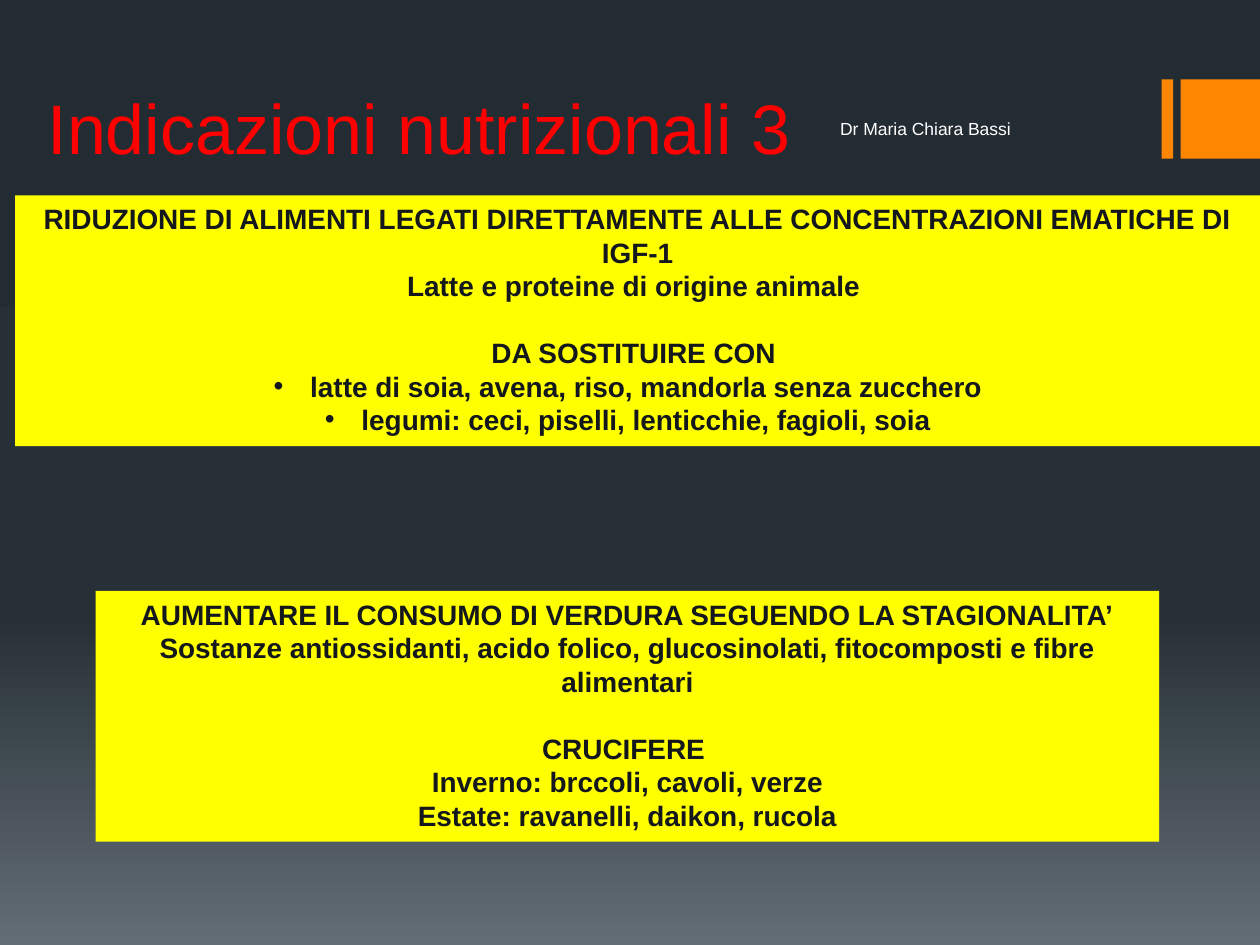
from copy import deepcopy

from lxml import etree
from pptx import Presentation
from pptx import util as u
from pptx.dml.color import RGBColor
from pptx.enum import shapes, text
from pptx.oxml.ns import qn


def rgb(value):
    return RGBColor.from_string(value)


class Deck:
    """Slide builder holding the style and the current slide."""

    font = "Arial"
    accent, panel_fill, panel_ink = "FF8600", "FFFF00", "14181C"
    title_ink, author_ink = "FF0000", "FFFFFF"

    def __init__(self, prs):
        self.s = prs.slides.add_slide(prs.slide_layouts[6])

    def background(self, stops):
        fill = self.s.background.fill
        fill.gradient()
        fill.gradient_angle = 270
        gradient = self.s.element.find(".//" + qn("a:gsLst"))
        gradient.insert(1, deepcopy(gradient[0]))
        for stop, (position, color) in zip(fill.gradient_stops, stops):
            stop.position = position
            stop.color.rgb = rgb(color)

    def rect(self, box, color):
        sp = self.s.shapes.add_shape(shapes.MSO_SHAPE.RECTANGLE, *map(u.Inches, box))
        sp.shadow.inherit = False
        sp.fill.solid()
        sp.fill.fore_color.rgb = rgb(color)
        sp.line.fill.background()
        return sp

    def set_text(self, p, words, size, color, bold=False):
        p.text = words
        for r in p.runs:
            r.font.name, r.font.size, r.font.bold = self.font, u.Pt(size), bold
            r.font.color.rgb = rgb(color)

    def label(self, box, words, size, color, anchor, top=0.05):
        tf = self.s.shapes.add_textbox(*map(u.Inches, box)).text_frame
        tf.word_wrap = True
        tf.margin_top = u.Inches(top)
        tf.vertical_anchor = anchor
        self.set_text(tf.paragraphs[0], words, size, color)

    def bullet(self, p):
        pPr = p._p.get_or_add_pPr()
        pPr.set("marL", str(u.Inches(0.06)))
        pPr.set("indent", str(u.Inches(-0.23)))
        etree.SubElement(pPr, qn("a:buFont")).set("typeface", self.font)
        etree.SubElement(pPr, qn("a:buChar")).set("char", "•")

    def panel(self, box, lines, gap_before, bullets=()):
        tf = self.rect(box, self.panel_fill).text_frame
        tf.word_wrap = True
        tf.vertical_anchor = text.MSO_ANCHOR.TOP
        for i, line in enumerate(lines):
            p = tf.paragraphs[0] if i == 0 else tf.add_paragraph()
            p.alignment = text.PP_ALIGN.CENTER
            self.set_text(p, line, 16, self.panel_ink, bold=True)
            if i == gap_before:
                p.space_before = u.Pt(19)
            if i in bullets:
                self.bullet(p)


def main():
    prs = Presentation()
    prs.slide_width, prs.slide_height = u.Inches(10), u.Inches(7.5)
    deck = Deck(prs)
    deck.background([(0, "242C33"), (0.65, "273037"), (1, "636D76")])
    for left, width in ((9.22, 0.09), (9.37, 0.63)):
        deck.rect((left, 0.63, width, 0.63), deck.accent)
    deck.label((6.57, 0.94, 2.46, 0.33), "Dr Maria Chiara Bassi", 10,
               deck.author_ink, text.MSO_ANCHOR.TOP, top=0)
    deck.label((0.28, 0.13, 8, 1.26), "Indicazioni nutrizionali 3", 40,
               deck.title_ink, text.MSO_ANCHOR.BOTTOM)
    deck.panel((0.12, 1.55, 9.88, 1.99), [
        "RIDUZIONE DI ALIMENTI LEGATI DIRETTAMENTE ALLE CONCENTRAZIONI EMATICHE DI IGF-1",
        "Latte e proteine di origine animale ",
        "DA SOSTITUIRE CON ",
        " latte di soia, avena, riso, mandorla senza zucchero",
        " legumi: ceci, piselli, lenticchie, fagioli, soia",
    ], gap_before=2, bullets=(3, 4))
    deck.panel((0.76, 4.69, 8.44, 1.99), [
        "AUMENTARE IL CONSUMO DI VERDURA SEGUENDO LA STAGIONALITA’",
        "Sostanze antiossidanti, acido folico, glucosinolati, fitocomposti e fibre alimentari",
        "CRUCIFERE ",
        "Inverno: brccoli, cavoli, verze",
        "Estate: ravanelli, daikon, rucola",
    ], gap_before=2)
    prs.save("out.pptx")


if __name__ == "__main__":
    main()
